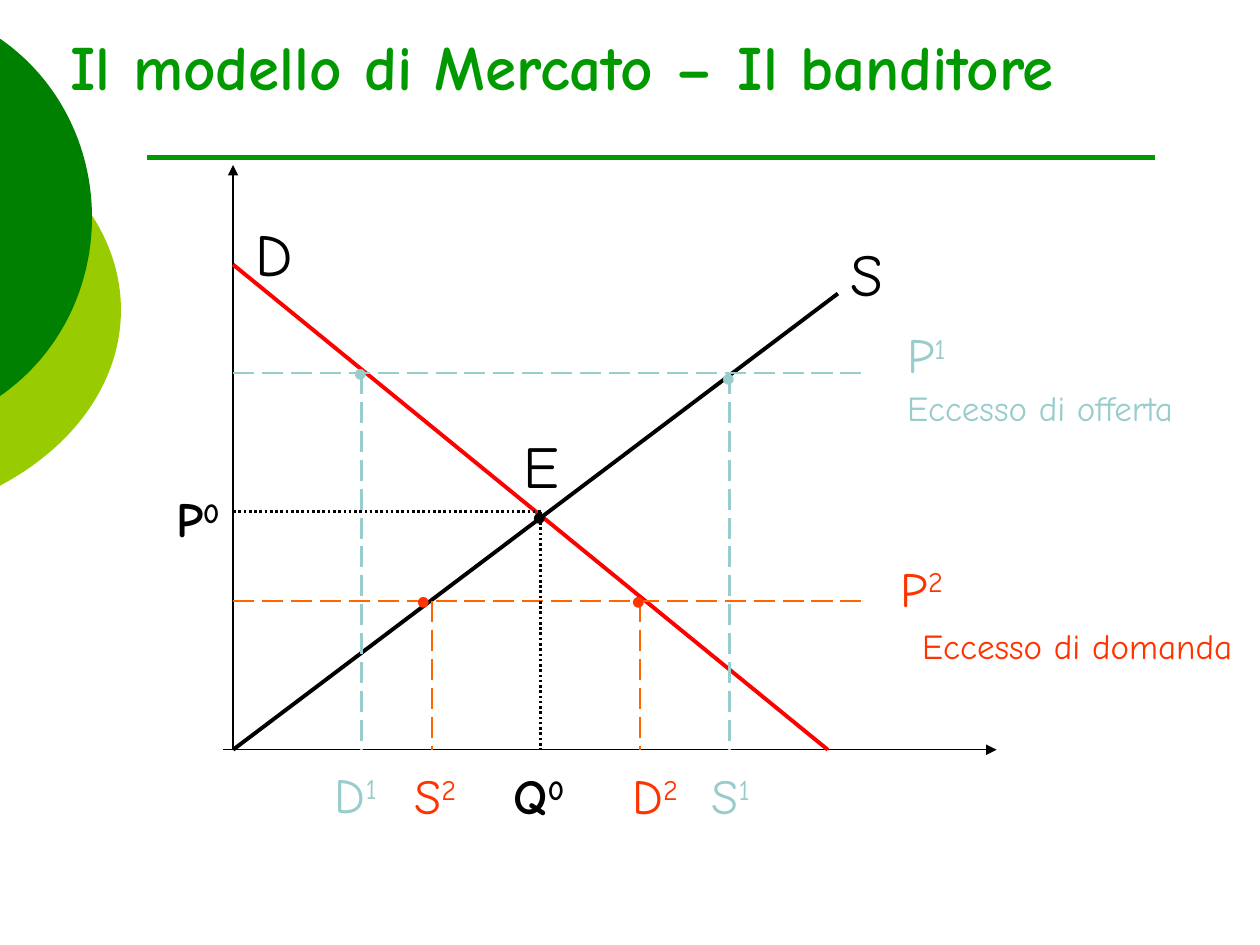
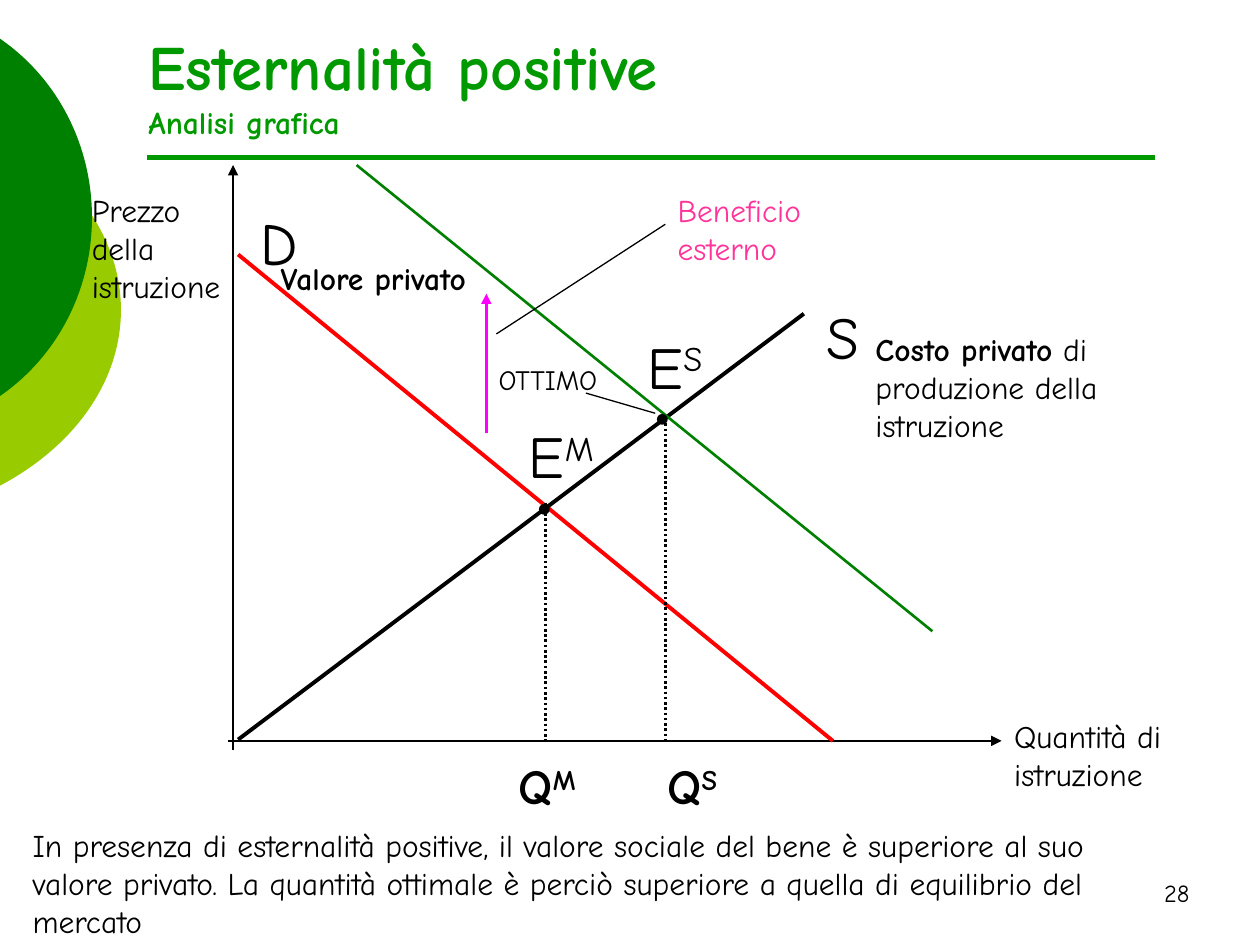
from lxml import etree
from pptx import Presentation
from pptx.dml.color import RGBColor
from pptx.enum.dml import MSO_LINE
from pptx.enum.shapes import MSO_CONNECTOR
from pptx.enum.text import MSO_ANCHOR, MSO_AUTO_SIZE, PP_ALIGN
from pptx.oxml.ns import qn
from pptx.util import Inches, Pt

FONT = "Comic Neue"
COLORS = {
    "black": "000000",
    "title": "009900",
    "green": "008000",
    "lime": "99CC00",
    "demand": "FF0000",
    "surplus": "99CCCC",
    "shortage": "FF3300",
    "shortage_line": "FF6600",
    "benefit": "FF3399",
    "benefit_arrow": "FF00FF",
}
AXIS_X = 1.85
DASHED, DOTTED = MSO_LINE.LONG_DASH, MSO_LINE.ROUND_DOT


def rgb(color):
    """Return the palette colour of that name."""
    return RGBColor.from_string(COLORS[color])


def add_run(paragraph, text, size=18, color="black", bold=False, raised=False):
    """Append one formatted run, raised when it is a superscript."""
    run = paragraph.add_run()
    run.text = text
    run.font.name = FONT
    run.font.size = Pt(size)
    run.font.bold = bold
    run.font.color.rgb = rgb(color)
    if raised:
        run.font._element.set("baseline", "30000")


def write(slide, box, *paragraphs, wrap=True, grow=True, align=PP_ALIGN.LEFT,
          anchor=MSO_ANCHOR.TOP, **style):
    """Write paragraphs, each a string or a list of (text, changes) runs."""
    frame = slide.shapes.add_textbox(*map(Inches, box)).text_frame
    frame.word_wrap = wrap
    frame.auto_size = MSO_AUTO_SIZE.SHAPE_TO_FIT_TEXT if grow else MSO_AUTO_SIZE.NONE
    frame.vertical_anchor = anchor
    for index, runs in enumerate(paragraphs):
        paragraph = frame.add_paragraph() if index else frame.paragraphs[0]
        paragraph.alignment = align
        for text, changes in [(runs, {})] if isinstance(runs, str) else runs:
            add_run(paragraph, text, **{**style, **changes})


def add_symbol(slide, left, top, width, letter, index="", size=34, **style):
    """Write a curve, point, price or quantity symbol with its superscript."""
    height = 0.67 if size == 34 else 0.57
    runs = [(letter, {})]
    if index:
        runs.append((index, {"raised": True}))
    write(slide, (left, top, width, height), runs, wrap=False, size=size, **style)


def add_point(slide, x, y, color="black"):
    """Mark an intersection with a bullet centred on it."""
    add_symbol(slide, x - 0.17, y - 0.4, 0.42, "•", color=color)


def add_line(slide, start, end, color="black", width=0.75, dash=None, arrow=False):
    """Draw a straight line, with an arrowhead at its end on request."""
    segment = slide.shapes.add_connector(
        MSO_CONNECTOR.STRAIGHT, *map(Inches, (*start, *end)))
    segment.line.color.rgb = rgb(color)
    segment.line.width = Pt(width)
    if dash:
        segment.line.dash_style = dash
    properties = segment._element.spPr
    if arrow:
        outline = properties.find(qn("a:ln"))
        etree.SubElement(outline, qn("a:tailEnd"), type="triangle")
    etree.SubElement(properties, qn("a:effectLst"))


def add_disc(slide, box, top, bottom, reach, bulge, spread, color):
    """Draw a disc in its box, cut at the left edge of the slide."""
    left, box_top, width, height = box
    right, box_bottom = left + width, box_top + height
    corners = [(right, box_top), (right, box_bottom), (left, box_bottom)]
    frame = slide.shapes.build_freeform(Inches(left), Inches(box_top), scale=1.0)
    frame.add_line_segments([tuple(map(Inches, corner)) for corner in corners])
    disc = frame.convert_to_shape()
    disc.shadow.inherit = False
    disc.fill.solid()
    disc.fill.fore_color.rgb = rgb(color)
    disc.line.fill.background()

    middle = (top + bottom) / 2
    edge = -0.01
    curves = [
        ("moveTo", [(edge, top)]),
        ("cubicBezTo", [(bulge, top + 0.32), (reach, middle - spread), (reach, middle)]),
        ("cubicBezTo", [(reach, middle + spread), (bulge, bottom - 0.32), (edge, bottom)]),
        ("close", []),
    ]
    outline = disc._element.spPr.find(".//" + qn("a:path"))
    del outline[:]
    for command, points in curves:
        step = etree.SubElement(outline, qn(f"a:{command}"))
        for x, y in points:
            etree.SubElement(step, qn("a:pt"), x=str(Inches(x - left)),
                             y=str(Inches(y - box_top)))


def add_base(deck):
    """Add a slide with the two discs and the title rule."""
    slide = deck.slides.add_slide(deck.slide_layouts[6])
    add_disc(slide, (-3.54, 0.75, 4.5, 3.42), 1.06, 3.86, 0.96, 0.6, 0.56, "lime")
    add_disc(slide, (-2.65, 0, 3.38, 3.45), 0.3, 3.15, 0.73, 0.46, 0.57, "green")
    add_line(slide, (1.17, 1.25), (9.17, 1.25), "title", 3)
    return slide


def add_market(slide, left, floor, demand, supply):
    """Draw the axes with the demand and supply curves, each a start and end."""
    add_line(slide, (left, floor), (left + 6.14, floor), arrow=True)
    add_line(slide, (AXIS_X, 5.95), (AXIS_X, 1.31), arrow=True)
    add_line(slide, *demand, "demand", 2.25)
    add_line(slide, *supply, width=2.25)


def add_auctioneer(deck):
    """Build the market model with excess supply and excess demand."""
    slide = add_base(deck)
    floor = 5.95
    add_market(slide, 1.77, floor, ((AXIS_X, 2.1), (6.57, floor)),
               ((AXIS_X, floor), (6.65, 2.33)))
    add_symbol(slide, 1.93, 1.67, 0.54, "D")
    add_symbol(slide, 6.65, 1.83, 0.53, "S")

    drops = [
        (2.96, 6.89, (2.87, 5.79), "surplus", DASHED),
        (4.77, 6.89, (3.43, 5.08), "shortage_line", DASHED),
        (4.06, 4.29, (4.29,), "black", DOTTED),
    ]
    for price, right, quantities, color, dash in drops:
        add_line(slide, (AXIS_X, price), (right, price), color, 1.5, dash)
        for quantity in quantities:
            add_line(slide, (quantity, price), (quantity, floor), color, 1.5, dash)

    points = [(4.28, 4.11, "black"), (2.86, 2.97, "surplus"), (5.78, 3.01, "surplus"),
              (3.36, 4.78, "shortage"), (5.07, 4.78, "shortage")]
    for point in points:
        add_point(slide, *point)

    symbols = [
        (7.1, 2.53, 0.52, "P", "1", "surplus"),
        (2.56, 6.02, 0.61, "D", "1", "surplus"),
        (5.55, 6.03, 0.59, "S", "1", "surplus"),
        (7.05, 4.38, 0.57, "P", "2", "shortage"),
        (4.92, 6.03, 0.65, "D", "2", "shortage"),
        (3.19, 6.03, 0.63, "S", "2", "shortage"),
        (1.3, 3.83, 0.57, "P", "0", "black"),
        (3.98, 6.03, 0.71, "Q", "0", "black"),
    ]
    for *symbol, color in symbols:
        add_symbol(slide, *symbol, size=28, color=color, bold=color == "black")
    add_symbol(slide, 4.06, 3.36, 0.5, "E")
    write(slide, (7.1, 3.02, 2.65, 0.44), "Eccesso di offerta",
          wrap=False, size=20, color="surplus")
    write(slide, (7.22, 4.91, 2.78, 0.44), "Eccesso di domanda",
          wrap=False, size=20, color="shortage")
    write(slide, (0.46, 0.17, 9.11, 0.71), "Il modello di Mercato – Il banditore",
          size=36, color="title", bold=True)


def add_externality(deck):
    """Build the graphic analysis of positive externalities."""
    slide = add_base(deck)
    floor = 5.88
    add_market(slide, 1.81, floor, ((1.89, 2.02), (6.61, floor)),
               ((1.89, 5.87), (6.38, 2.49)))
    add_line(slide, (2.83, 1.31), (7.4, 5.01), "green", 1.5)
    add_line(slide, (3.86, 3.44), (3.86, 2.33), "benefit_arrow", 1.5, arrow=True)
    add_line(slide, (3.94, 2.65), (5.28, 1.78))
    add_line(slide, (4.65, 3.12), (5.2, 3.28))
    for quantity, price in ((4.33, 3.99), (5.28, 3.36)):
        add_line(slide, (quantity, price), (quantity, floor), "black", 1.5, DOTTED)
    add_point(slide, 4.32, 4.04)
    add_point(slide, 5.26, 3.33)

    add_symbol(slide, 1.97, 1.59, 0.54, "D")
    add_symbol(slide, 6.46, 2.33, 0.46, "S")
    add_symbol(slide, 4.1, 3.28, 0.77, "E", "M")
    add_symbol(slide, 5.04, 2.57, 0.72, "E", "S")
    add_symbol(slide, 4.02, 5.95, 0.78, "Q", "M", size=28, bold=True)
    add_symbol(slide, 5.2, 5.95, 0.73, "Q", "S", size=28, bold=True)

    write(slide, (0.63, 1.47, 1.42, 1), "Prezzo della istruzione")
    write(slide, (7.95, 5.64, 1.85, 0.7), "Quantità di istruzione")
    write(slide, (6.85, 2.57, 2.44, 1), [
        ("Costo privato", {"bold": True}), (" di produzione della istruzione", {})])
    write(slide, (2.13, 2.01, 2.44, 0.4), "Valore privato", bold=True)
    write(slide, (5.28, 1.47, 1.64, 0.71), "Beneficio esterno", color="benefit")
    write(slide, (3.86, 2.83, 1.19, 0.37), "OTTIMO", wrap=False, size=16)
    write(slide, (0.16, 6.51, 8.82, 1.01),
          "In presenza di esternalità positive, il valore sociale del bene è "
          "superiore al suo valore privato. La quantità ottimale è perciò "
          "superiore a quella di equilibrio del mercato")
    write(slide, (7.21, 6.75, 2.33, 0.5), "28", grow=False, size=14,
          align=PP_ALIGN.RIGHT, anchor=MSO_ANCHOR.BOTTOM)
    write(slide, (1.08, 0.17, 8, 1), "Esternalità positive",
          [("Analisi grafica", {"size": 18})],
          grow=False, size=36, color="title", bold=True)


def main():
    """Build and save the two slides."""
    deck = Presentation()
    deck.slide_width, deck.slide_height = Inches(10), Inches(7.5)
    add_auctioneer(deck)
    add_externality(deck)
    deck.save("out.pptx")


if __name__ == "__main__":
    main()
